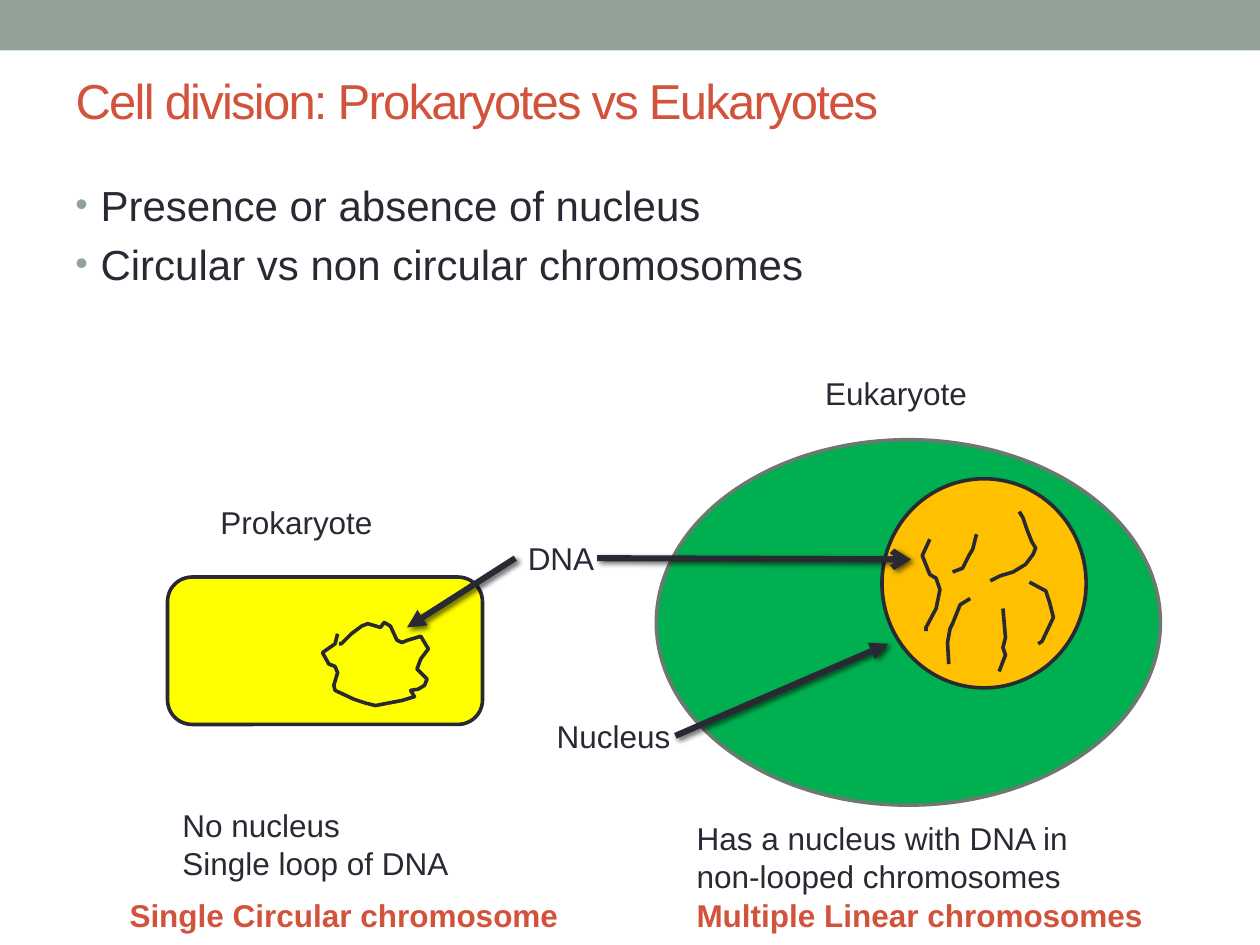
from lxml.etree import SubElement
from pptx import Presentation
from pptx.dml.color import RGBColor
from pptx.enum.shapes import MSO_CONNECTOR, MSO_SHAPE
from pptx.enum.text import MSO_ANCHOR, MSO_AUTO_SIZE, PP_ALIGN
from pptx.oxml.ns import qn
from pptx.util import Inches, Pt

COLORS = {"band": "93A299", "accent": "D2533C", "ink": "292934", "cell_edge": "6D7871",
          "yellow": "FFFF00", "green": "00B050", "orange": "FFC000", "shadow": "000000"}

# All places are in units of a grid of 100 columns by 75 rows
TITLE = "Cell division: Prokaryotes vs Eukaryotes"
BULLETS = ["Presence or absence of nucleus", "Circular vs non circular chromosomes"]
SUMMARIES = [("Single Circular chromosome", (9.3, 70.6, 36.4, 4)),
             ("Multiple Linear chromosomes", (54.3, 70.6, 37.8, 4))]
LABELS = [(["Prokaryote"], (16.5, 39.4, 22.2, 4)),
          (["Eukaryote"], (64.5, 29.2, 22.2, 4)),
          (["No nucleus", "Single loop of DNA"], (13.5, 63.5, 25.3, 7.1)),
          (["Has a nucleus with DNA in non-looped chromosomes"], (54.3, 64.5, 36.1, 7.1)),
          (["DNA"], (40.9, 42.3, 22.2, 4)),
          (["Nucleus"], (43.2, 56.4, 22.2, 4))]
CELLS = [(MSO_SHAPE.ROUNDED_RECTANGLE, (13.3, 45.8, 25, 11.7), "yellow", "ink"),
         (MSO_SHAPE.OVAL, (52.1, 34.9, 40, 29), "green", "cell_edge"),
         (MSO_SHAPE.OVAL, (70, 38, 16.2, 16.6), "orange", "ink")]
DNA_LOOP = [(26.8, 50.3), (26.6, 51.1), (25.6, 51.8), (26.1, 52.7), (26.6, 52.9),
            (26.8, 53.4), (26.5, 54.4), (26.6, 54.8), (28.1, 55.5), (29, 55.8),
            (29.8, 56), (31.9, 55.6), (32.9, 55.3), (32.6, 54.8), (33.2, 54.7),
            (33.7, 54.4), (33.9, 53.9), (33.1, 53.1), (33.4, 52.3), (34, 51.5),
            (33.4, 50.5), (32.4, 50.8), (31.9, 51), (31.5, 50.8), (31, 49.7),
            (30.5, 49.4), (30.2, 49.8), (29.2, 49.5), (28.7, 49.7), (27.9, 50.3),
            (27.1, 51.1), (26.9, 51.1)]
CHROMOSOMES = [
    [(73.8, 42.8), (73.2, 44.1), (73.8, 45.6), (74.3, 45.9), (74.6, 46.8),
     (74.4, 47.8), (74.3, 48.3), (73.5, 49.8), (73.5, 50.1)],
    [(75.6, 45.4), (76.4, 45.1), (76.9, 44.1), (77.2, 43.6), (77.5, 42.4)],
    [(78.6, 46.1), (79.4, 45.7), (80.4, 45.4), (81.4, 44.8), (82, 44), (82.2, 43.5),
     (81.9, 43), (81.5, 42), (81.2, 41.1), (80.9, 40.6)],
    [(77, 47.5), (76.2, 48), (75.6, 49.5), (75.4, 49.9), (75.2, 51), (75.3, 52.7)],
    [(79.3, 53.3), (79.6, 52.5), (79.8, 52), (79.6, 51.4), (79.8, 50.6), (79.6, 48.3)],
    [(81.7, 46.2), (83, 46.9), (83.3, 47.8), (83.6, 49), (82.7, 50.9), (82.4, 51.1)]]
# start, end, arrowhead, label joined at its left side
ARROWS = [((40.9, 44.3), (32.3, 49.8), "triangle", "DNA"),
          ((47.4, 44.3), (72.3, 44.4), "arrow", None),
          ((53.6, 58.4), (70.5, 51.1), "triangle", None)]

deck = Presentation()
deck.slide_width, deck.slide_height = Inches(10), Inches(7.5)
UNIT = deck.slide_width / 100
slide = deck.slides.add_slide(deck.slide_layouts[5])
shapes = slide.shapes


def grid(*values):
    return [round(value * UNIT) for value in values]


def rgb(name):
    return RGBColor.from_string(COLORS[name])


def write(frame, paragraphs, size=18, color="ink", bold=False, wrap=True, before=0):
    frame.word_wrap = wrap
    for index, text in enumerate(paragraphs):
        paragraph = frame.paragraphs[0] if index == 0 else frame.add_paragraph()
        paragraph.alignment = PP_ALIGN.LEFT
        paragraph.space_before = Pt(before)
        run = paragraph.add_run()
        run.text = text
        run.font.name, run.font.size, run.font.bold = "Arial", Pt(size), bold
        run.font.color.rgb = rgb(color)


def add_label(paragraphs, place, **text_format):
    label = shapes.add_textbox(*grid(*place))
    write(label.text_frame, paragraphs, **text_format)
    label.text_frame.auto_size = MSO_AUTO_SIZE.SHAPE_TO_FIT_TEXT
    return label


def outline(part, color, width=2.08):
    part.line.color.rgb = rgb(color)
    part.line.width = Pt(width)


def add_filled(kind, place, fill, edge=None):
    part = shapes.add_shape(kind, *grid(*place))
    part.shadow.inherit = False
    part.fill.solid()
    part.fill.fore_color.rgb = rgb(fill)
    if edge:
        outline(part, edge)
    else:
        part.line.fill.background()


def add_strand(points):
    start, *rest = [grid(*point) for point in points]
    builder = shapes.build_freeform(*start)
    builder.add_line_segments(rest, close=False)
    strand = builder.convert_to_shape()
    strand.shadow.inherit = False
    strand.fill.background()
    outline(strand, "ink")


def add_arrow(start, end, head, label=None):
    arrow = shapes.add_connector(MSO_CONNECTOR.STRAIGHT, *grid(*start, *end))
    if label is not None:
        arrow.begin_connect(label, 1)
    outline(arrow, "ink", 3.5)
    properties = arrow.element.spPr
    SubElement(properties.find(qn("a:ln")), qn("a:tailEnd"), type=head)
    effects = SubElement(properties, qn("a:effectLst"))
    shadow = SubElement(effects, qn("a:outerShdw"), blurRad=str(Pt(3)), dist=str(Pt(2)),
                        dir="2700000", algn="tl", rotWithShape="0")
    tint = SubElement(shadow, qn("a:srgbClr"), val=COLORS["shadow"])
    SubElement(tint, qn("a:alpha"), val="60000")


# Top band and title
add_filled(MSO_SHAPE.RECTANGLE, (0, 0, 100, 4), "band")
title = shapes.title
title.left, title.top, title.width, title.height = grid(5, 1.7, 90, 12.5)
write(title.text_frame, [TITLE], size=28, color="accent")
title.text_frame.vertical_anchor = MSO_ANCHOR.MIDDLE
title.text_frame.paragraphs[0].runs[0].font._element.set("spc", "-100")

# Bulleted points
points_box = shapes.add_textbox(*grid(5, 13.75, 90, 49.5))
write(points_box.text_frame, BULLETS, size=24, before=4.8)
for point in points_box.text_frame.paragraphs:
    layout = point._p.get_or_add_pPr()
    layout.set("marL", str(Inches(0.2)))
    layout.set("indent", str(Inches(-0.2)))
    SubElement(SubElement(layout, qn("a:buClr")), qn("a:srgbClr"), val=COLORS["band"])
    SubElement(layout, qn("a:buSzPct"), val="85000")
    SubElement(layout, qn("a:buFont"), typeface="Arial")
    SubElement(layout, qn("a:buChar"), char="•")

# Cells, nucleus and DNA
for summary, place in SUMMARIES:
    add_label([summary], place, color="accent", bold=True, wrap=False)
for kind, place, fill, edge in CELLS:
    add_filled(kind, place, fill, edge)
for strand_points in [DNA_LOOP, *CHROMOSOMES]:
    add_strand(strand_points)

# Labels and the arrows from them
labels = {lines[0]: add_label(lines, place) for lines, place in LABELS}
for start, end, head, label_name in ARROWS:
    add_arrow(start, end, head, labels.get(label_name))

deck.save("out.pptx")
